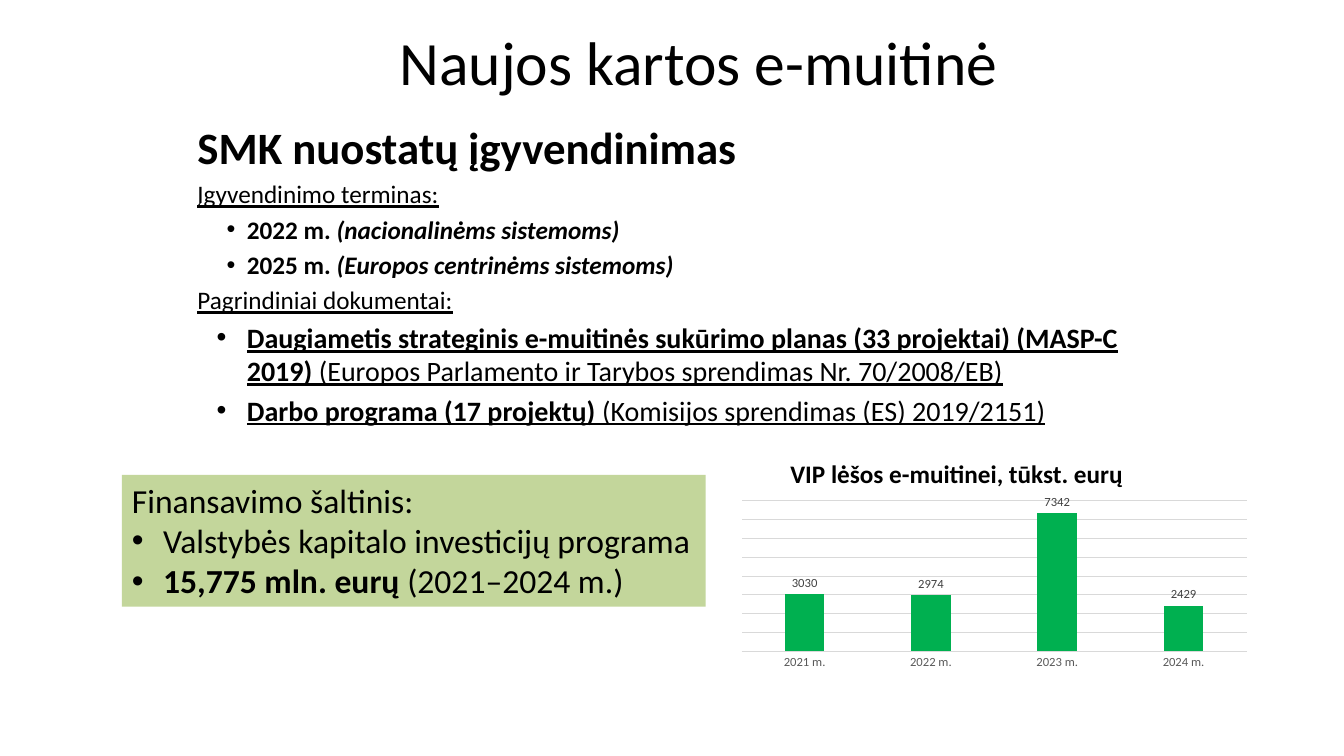
from lxml import etree
from pptx import Presentation
from pptx.chart.data import CategoryChartData
from pptx.dml.color import RGBColor
from pptx.enum.chart import XL_CHART_TYPE, XL_LABEL_POSITION, XL_TICK_LABEL_POSITION, XL_TICK_MARK
from pptx.enum.shapes import MSO_SHAPE
from pptx.enum.text import MSO_ANCHOR, PP_ALIGN
from pptx.oxml import parse_xml
from pptx.oxml.ns import nsdecls, qn
from pptx.util import Inches, Pt

FONT = "Calibri"
BLACK = RGBColor(0x00, 0x00, 0x00)
PALE_GREEN = RGBColor(0xC3, 0xD6, 0x9B)
GREEN = RGBColor(0x00, 0xB0, 0x50)
GRID_GRAY = RGBColor(0xD9, 0xD9, 0xD9)
AXIS_GRAY = RGBColor(0x59, 0x59, 0x59)
LABEL_GRAY = RGBColor(0x40, 0x40, 0x40)


def add_paragraph(tf, size, runs, indent=None, align=PP_ALIGN.LEFT, spacing=0):
    first = not tf.paragraphs[0].runs
    p = tf.paragraphs[0] if first else tf.add_paragraph()
    p.alignment = align
    if indent:
        left, hanging = indent
        pPr = p._p.get_or_add_pPr()
        pPr.set("marL", str(Inches(left)))
        pPr.set("indent", str(-Inches(hanging)))
        etree.SubElement(pPr, qn("a:buFont")).set("typeface", "Arial")
        etree.SubElement(pPr, qn("a:buChar")).set("char", "•")
    if not first:
        p.space_before = Pt(size * spacing)
    for text, style in runs:
        r = p.add_run()
        r.text = text
        r.font.name = FONT
        r.font.size = Pt(size)
        r.font.color.rgb = BLACK
        r.font.bold = "b" in style
        r.font.italic = "i" in style
        r.font.underline = "u" in style


def add_text(s, left, top, width, height):
    sp = s.shapes.add_textbox(Inches(left), Inches(top), Inches(width), Inches(height))
    sp.text_frame.word_wrap = True
    return sp.text_frame


prs = Presentation()
prs.slide_width = Inches(13.33)
prs.slide_height = Inches(7.5)
s = prs.slides.add_slide(prs.slide_layouts[6])

tf = add_text(s, 1.86, 1.14, 9.49, 3.37)
date_indent = (0.49, 0.2)
document_indent = (0.49, 0.3)
for size, indent, runs in [
    (32, None, [("SMK nuostatų įgyvendinimas", "b")]),
    (18, None, [("Įgyvendinimo terminas:", "u")]),
    (18, date_indent, [("2022 m. ", "b"), ("(nacionalinėms sistemoms)", "bi")]),
    (18, date_indent, [("2025 m. ", "b"), ("(Europos centrinėms sistemoms)", "bi")]),
    (18, None, [("Pagrindiniai dokumentai:", "u")]),
    (20, document_indent, [
        ("Daugiametis strateginis e-muitinės sukūrimo planas (33 projektai) (MASP-C 2019) ", "bu"),
        ("(Europos Parlamento ir Tarybos sprendimas Nr. 70/2008/EB)", "u")]),
    (20, document_indent, [
        ("Darbo programa (17 projektų) ", "bu"),
        ("(Komisijos sprendimas (ES) 2019/2151)", "u")]),
]:
    add_paragraph(tf, size, runs, indent, spacing=0.2)

tf = add_text(s, 2.62, 0.11, 8.62, 0.99)
tf.vertical_anchor = MSO_ANCHOR.MIDDLE
add_paragraph(tf, 44, [("Naujos kartos e-muitinė", "")], align=PP_ALIGN.CENTER)

tf = add_text(s, 7.74, 4.5, 5.03, 0.4)
add_paragraph(tf, 18, [("VIP lėšos e-muitinei, tūkst. eurų", "b")])

sp = s.shapes.add_shape(MSO_SHAPE.RECTANGLE, Inches(1.21), Inches(4.71), Inches(5.79), Inches(1.31))
sp.shadow.inherit = False
sp.fill.solid()
sp.fill.fore_color.rgb = PALE_GREEN
sp.line.fill.background()
tf = sp.text_frame
tf.word_wrap = False
tf.vertical_anchor = MSO_ANCHOR.TOP
funding_indent = (0.31, 0.31)
add_paragraph(tf, 24, [("Finansavimo šaltinis:", "")])
add_paragraph(tf, 24, [("Valstybės kapitalo investicijų programa", "")], funding_indent)
add_paragraph(tf, 24, [("15,775 mln. eurų ", "b"), ("(2021–2024 m.)", "")], funding_indent)

data = CategoryChartData(number_format="0")
data.categories = [f"{year} m." for year in range(2021, 2025)]
data.add_series("VIP lėšos", [3030, 2974, 7342, 2429])
chart = s.shapes.add_chart(XL_CHART_TYPE.COLUMN_CLUSTERED, Inches(7.25), Inches(4.91),
                           Inches(5.22), Inches(1.76), data).chart
chart.has_title = False
chart.has_legend = False
chart.font.name = FONT
chart.font.size = Pt(10)
chart.font.color.rgb = BLACK

years = chart.category_axis
years.major_tick_mark = XL_TICK_MARK.NONE
years.format.line.color.rgb = GRID_GRAY
years.format.line.width = Pt(0.75)

amounts = chart.value_axis
amounts.minimum_scale = 0
amounts.maximum_scale = 8000
amounts.major_unit = 1000
amounts.major_tick_mark = XL_TICK_MARK.NONE
amounts.tick_label_position = XL_TICK_LABEL_POSITION.NONE
amounts.format.line.fill.background()
amounts.major_gridlines.format.line.color.rgb = GRID_GRAY
amounts.major_gridlines.format.line.width = Pt(0.75)

plot = chart.plots[0]
plot.vary_by_categories = False
plot.gap_width = 219
plot.overlap = -27
plot.series[0].format.fill.solid()
plot.series[0].format.fill.fore_color.rgb = GREEN
plot.has_data_labels = True
labels = plot.data_labels
labels.show_value = True
labels.number_format = "0"
labels.number_format_is_linked = False
labels.position = XL_LABEL_POSITION.OUTSIDE_END
for font, color in [(years.tick_labels.font, AXIS_GRAY), (labels.font, LABEL_GRAY)]:
    font.name = FONT
    font.size = Pt(9)
    font.color.rgb = color

plot_area = chart._chartSpace.chart.plotArea
for layout in plot_area.findall(qn("c:layout")):
    plot_area.remove(layout)
plot_area.insert(0, parse_xml(
    f'<c:layout {nsdecls("c")}><c:manualLayout><c:layoutTarget val="inner"/>'
    '<c:xMode val="edge"/><c:yMode val="edge"/>'
    '<c:x val="0.02"/><c:y val="0.02"/><c:w val="0.96"/><c:h val="0.86"/>'
    '</c:manualLayout></c:layout>'))

prs.save("out.pptx")
